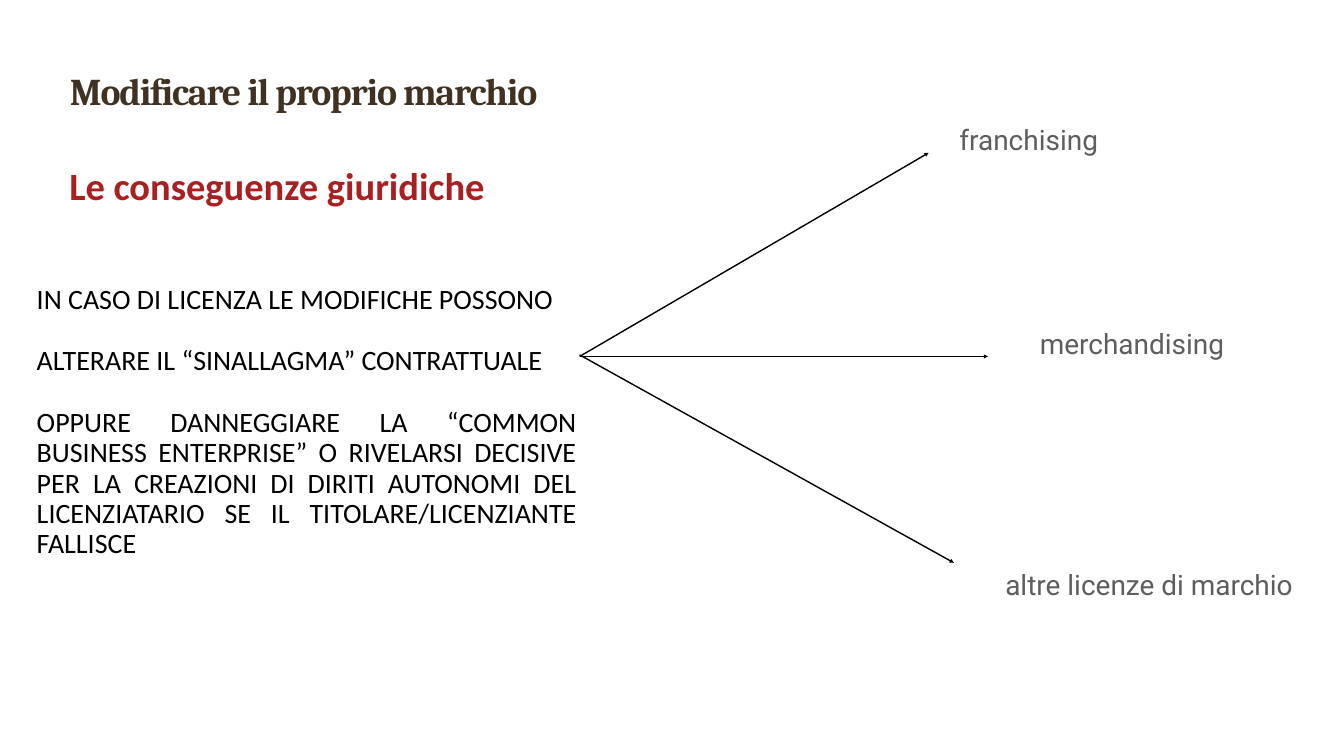
from lxml.etree import SubElement
from pptx import Presentation
from pptx.dml.color import RGBColor
from pptx.enum.shapes import MSO_CONNECTOR
from pptx.enum.text import MSO_ANCHOR, PP_ALIGN
from pptx.oxml.ns import qn
from pptx.util import Pt

PX = 9525  # EMU per px, 96 px to the inch

THEME = {
    "title": {"font": "Cambria", "size": 54, "color": "3F3222", "bold": True},
    "subtitle": {"font": "Calibri", "size": 55, "color": "A91F22", "bold": True},
    "body": {"font": "Calibri", "size": 40, "color": "000000", "bold": False},
    "label": {"font": "Roboto", "size": 40, "color": "5E5E5E", "bold": False},
    "arrow": {"color": "000000", "width": 2},
}

presentation = Presentation()
presentation.slide_width = 2560 * PX
presentation.slide_height = 1440 * PX
slide = presentation.slides.add_slide(presentation.slide_layouts[6])


def add_text(box, texts, style, align=PP_ALIGN.LEFT, anchor=MSO_ANCHOR.TOP,
             line_spacing=1.0, space_before=0, tracking=0, inset=6, wrap=True):
    shape = slide.shapes.add_textbox(*(value * PX for value in box))
    frame = shape.text_frame
    frame.word_wrap = wrap
    frame.vertical_anchor = anchor
    frame.margin_left = frame.margin_right = inset * PX
    frame.margin_top = frame.margin_bottom = inset * PX
    look = THEME[style]
    for index, text in enumerate(texts):
        paragraph = frame.add_paragraph() if index else frame.paragraphs[0]
        paragraph.alignment = align
        paragraph.line_spacing = line_spacing
        paragraph.space_before = Pt(space_before if index else 0)
        run = paragraph.add_run()
        run.text = text
        run.font.name = look["font"]
        run.font.size = Pt(look["size"])
        run.font.bold = look["bold"]
        run.font.color.rgb = RGBColor.from_string(look["color"])
        if tracking:
            run.font._element.set("spc", str(tracking))


# Headings
add_text((127, 140, 1026, 151), ["Modificare il proprio marchio"], "title",
         line_spacing=0.8, tracking=-170)
add_text((127, 304, 1026, 98), ["Le conseguenze giuridiche"], "subtitle", inset=5)

# Legal consequences
consequences = [
    "IN CASO DI LICENZA LE MODIFICHE POSSONO",
    "ALTERARE IL “SINALLAGMA” CONTRATTUALE",
    "OPPURE DANNEGGIARE LA “COMMON BUSINESS ENTERPRISE” O RIVELARSI DECISIVE "
    "PER LA CREAZIONI DI DIRITI AUTONOMI DEL LICENZIATARIO SE IL "
    "TITOLARE/LICENZIANTE FALLISCE",
]
add_text((64, 537, 1040, 638), consequences, "body", align=PP_ALIGN.JUSTIFY,
         line_spacing=0.9, space_before=45)

# Licence types: label, label box, arrow start and end
branches = [
    ("merchandising", (1950, 616, 412, 76), (1104, 679), (1882, 679)),
    ("franchising", (1817, 228, 285, 76), (1104, 679), (1769, 291)),
    ("altre licenze di marchio", (1882, 1075, 613, 76), (1104, 676), (1817, 1072)),
]
for label, box, start, end in branches:
    arrow = slide.shapes.add_connector(
        MSO_CONNECTOR.STRAIGHT, *(value * PX for value in start + end))
    arrow.line.width = Pt(THEME["arrow"]["width"])
    arrow.line.color.rgb = RGBColor.from_string(THEME["arrow"]["color"])
    SubElement(arrow.line._get_or_add_ln(), qn("a:tailEnd"), type="triangle")
    SubElement(arrow._element.spPr, qn("a:effectLst"))
    add_text(box, [label], "label", align=PP_ALIGN.CENTER,
             anchor=MSO_ANCHOR.MIDDLE, wrap=False)

presentation.save("out.pptx")
